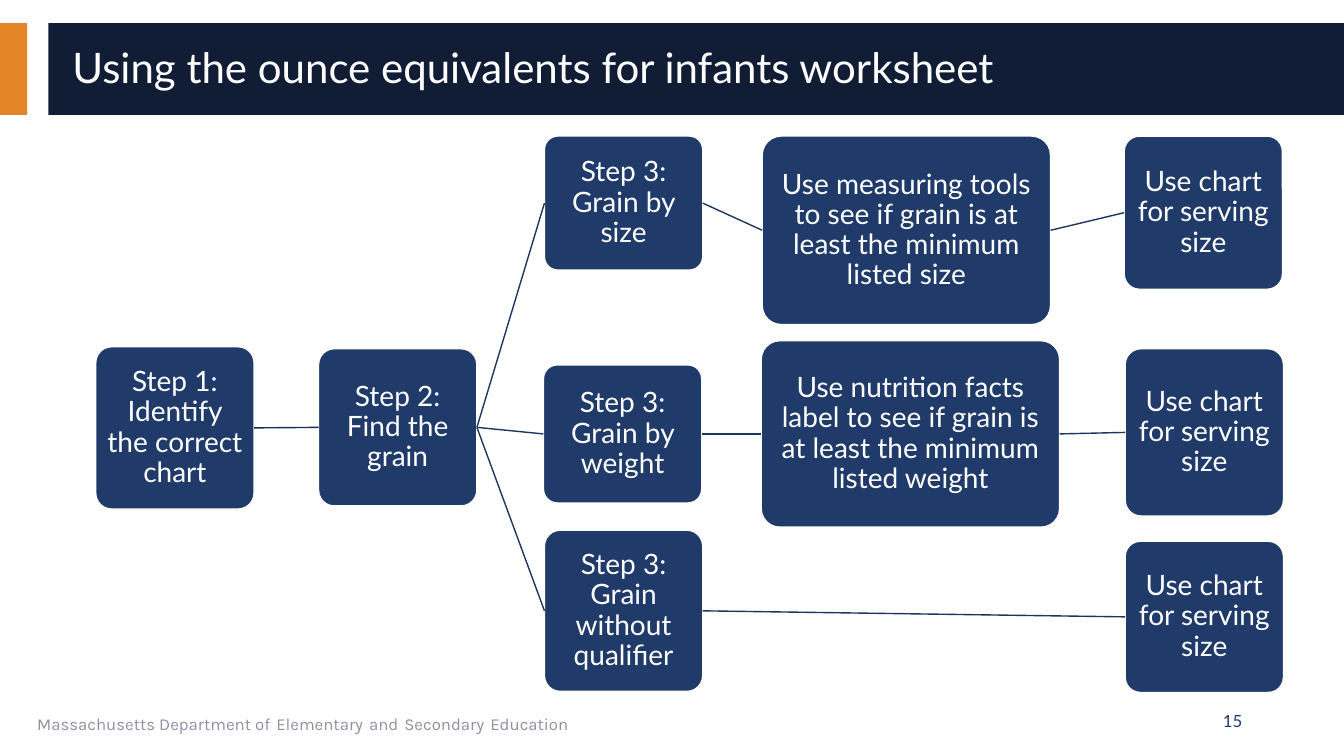
from pptx import Presentation
from pptx import util as u
from pptx.dml.color import RGBColor
from pptx.enum import shapes, text
from pptx.oxml.ns import qn
from lxml import etree

ORANGE = RGBColor(0xE3, 0x85, 0x26)
MIDNIGHT = RGBColor(0x10, 0x1D, 0x35)
NAVY = RGBColor(0x20, 0x3B, 0x6A)
FIRST_LINK = RGBColor(0x1A, 0x2F, 0x55)
LINK = RGBColor(0x1D, 0x36, 0x60)
GREY = RGBColor(0x8D, 0x92, 0xA1)
WHITE = RGBColor(0xFF, 0xFF, 0xFF)

STEP_WIDTH = 1.57
STEPS = {
    "identify": (0.95, 3.44, STEP_WIDTH, 1.61, "Step 1: Identify the correct chart"),
    "find": (3.16, 3.46, STEP_WIDTH, 1.56, "Step 2: Find the grain"),
    "size": (5.4, 1.35, STEP_WIDTH, 1.33, "Step 3: Grain by size"),
    "measure": (7.56, 1.35, 2.86, 1.87,
                "Use measuring tools to see if grain is at least the minimum listed size"),
    "size chart": (11.15, 1.35, STEP_WIDTH, 1.52, "Use chart for serving size"),
    "weight": (5.39, 3.62, STEP_WIDTH, 1.37, "Step 3: Grain by weight"),
    "label": (7.55, 3.38, 2.96, 1.85,
              "Use nutrition facts label to see if grain is at least the minimum listed weight"),
    "weight chart": (11.16, 3.46, STEP_WIDTH, 1.66, "Use chart for serving size"),
    "unqualified": (5.4, 5.26, STEP_WIDTH, 1.6, "Step 3: Grain without qualifier"),
    "unqualified chart": (11.16, 5.37, STEP_WIDTH, 1.5, "Use chart for serving size"),
}
PATHS = [
    ("identify", "find"),
    ("find", "size", "measure", "size chart"),
    ("find", "weight", "label", "weight chart"),
    ("find", "unqualified", "unqualified chart"),
]


def add_run(paragraph, wording, size, color, font="Lato"):
    """Append one formatted run to a paragraph."""
    run = paragraph.add_run()
    run.text = wording
    run.font.name = font
    run.font.size = u.Pt(size)
    run.font.color.rgb = color


def add_text_box(slide, left, top, width, height, anchor=text.MSO_ANCHOR.MIDDLE):
    """Place a wrapping text box and return its first paragraph."""
    frame = slide.shapes.add_textbox(*map(u.Inches, (left, top, width, height))).text_frame
    frame.word_wrap = True
    frame.vertical_anchor = anchor
    return frame.paragraphs[0]


def add_block(slide, preset, left, top, width, height, fill):
    """Place a filled shape without shadow or outline."""
    block = slide.shapes.add_shape(preset, *map(u.Inches, (left, top, width, height)))
    block.shadow.inherit = False
    block.fill.solid()
    block.fill.fore_color.rgb = fill
    block.line.fill.background()
    return block


def add_header(slide, top, height):
    """Draw the accent, the title band and the title."""
    rectangle = shapes.MSO_SHAPE.RECTANGLE
    add_block(slide, rectangle, 0, top, 0.27, height, ORANGE)
    add_block(slide, rectangle, 0.48, top, 12.85, height, MIDNIGHT)
    title = add_text_box(slide, 0.62, top + 0.09, 12.44, height - 0.17)
    title.line_spacing = 0.9
    add_run(title, "Using the ounce equivalents for infants worksheet", 30, WHITE)


def add_step(slide, left, top, width, height, wording):
    """Draw one rounded step of the flow."""
    step = add_block(slide, shapes.MSO_SHAPE.ROUNDED_RECTANGLE, left, top, width, height, NAVY)
    step.adjustments[0] = 0.1
    step.line.color.rgb = WHITE
    step.line.width = u.Pt(1)
    frame = step.text_frame
    frame.word_wrap = True
    frame.vertical_anchor = text.MSO_ANCHOR.MIDDLE
    frame.margin_left = frame.margin_right = u.Inches(0.05)
    frame.margin_top = frame.margin_bottom = u.Inches(0.05)
    paragraph = frame.paragraphs[0]
    paragraph.alignment = text.PP_ALIGN.CENTER
    paragraph.line_spacing = 0.9
    add_run(paragraph, wording, 20, WHITE)
    return step


def add_link(slide, start, end, color):
    """Join the right side of one step to the left side of the next."""
    link = slide.shapes.add_connector(shapes.MSO_CONNECTOR.STRAIGHT, 0, 0, 0, 0)
    link.begin_connect(start, 3)
    link.end_connect(end, 1)
    link.line.color.rgb = color
    link.line.width = u.Pt(1)
    etree.SubElement(link._element.spPr, qn("a:effectLst"))


def add_flow(slide):
    """Draw all steps and the links along each path."""
    steps = {name: add_step(slide, *details) for name, details in STEPS.items()}
    for path_names in PATHS:
        for start, end in zip(path_names, path_names[1:]):
            color = FIRST_LINK if start == "identify" else LINK
            add_link(slide, steps[start], steps[end], color)


def add_footer(slide, top, height):
    """Write the department name and the page number."""
    department = add_text_box(slide, 0.27, top, 8.44, height, text.MSO_ANCHOR.TOP)
    for index, part in enumerate(
            ("Massachusetts Department of", "Elementary", "and", "Secondary", "Education")):
        if index:
            add_run(department, " ", 18, NAVY, "Karla")
        add_run(department, part, 12, GREY, "Karla")
    page = add_text_box(slide, 9.42, top, 3, height)
    page.alignment = text.PP_ALIGN.RIGHT
    add_run(page, "15", 12, NAVY)


def main():
    """Build and save the slide."""
    deck = Presentation()
    deck.slide_width = u.Inches(13.33)
    deck.slide_height = u.Inches(7.5)
    slide = deck.slides.add_slide(deck.slide_layouts[6])
    add_header(slide, 0.23, 0.91)
    add_flow(slide)
    add_footer(slide, 6.95, 0.4)
    deck.save("out.pptx")


if __name__ == "__main__":
    main()
